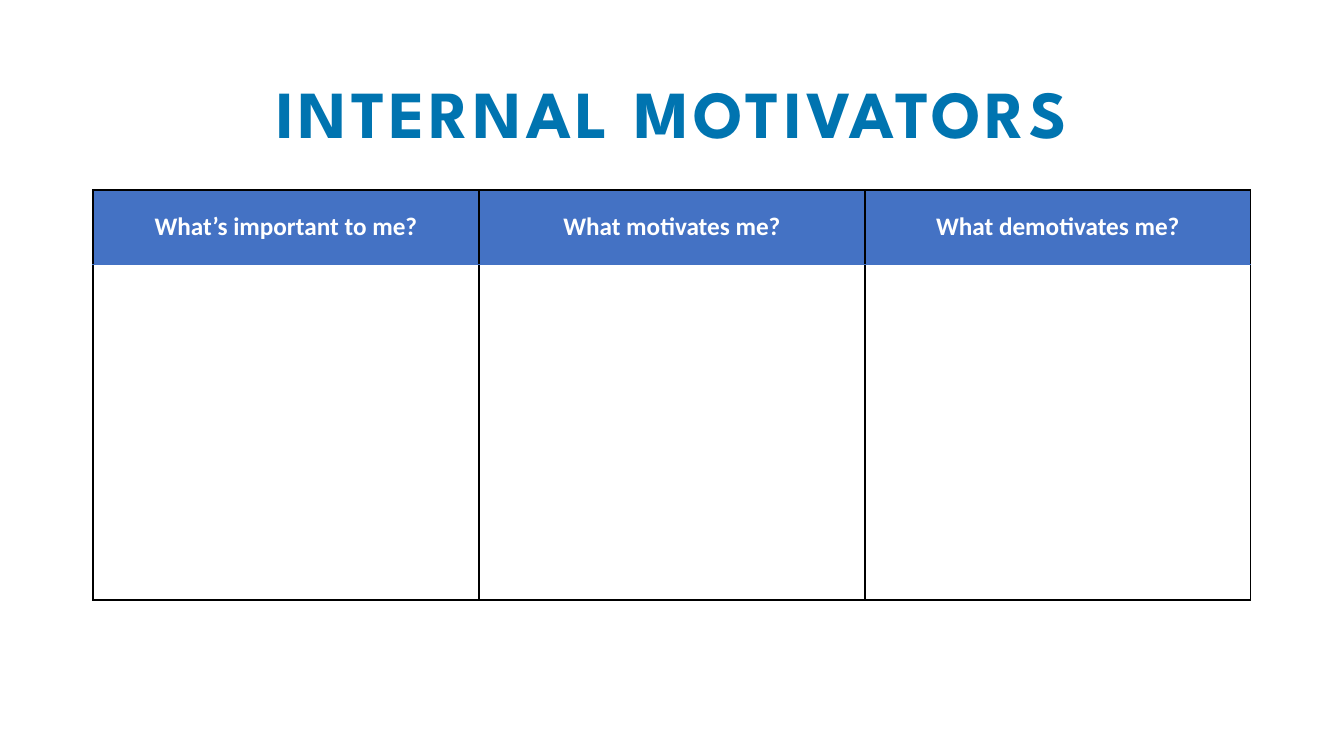
import pptx
import pptx.dml.color
import pptx.enum.text
import pptx.oxml
import pptx.oxml.ns
import pptx.util

RGBColor = pptx.dml.color.RGBColor
TITLE_BLUE = RGBColor(0x00, 0x74, 0xB0)
HEADER_BLUE = RGBColor(0x44, 0x72, 0xC4)
WHITE = RGBColor(0xFF, 0xFF, 0xFF)
BLACK = RGBColor(0x00, 0x00, 0x00)

TITLE_ONLY = 5
QUESTIONS = ["What’s important to me?", "What motivates me?", "What demotivates me?"]


def px(length):
    return round(length * 914400 / 100.8)


class SlideBuilder:
    title_font = "League Spartan"
    table_font = "Calibri"

    def __init__(self, presentation):
        self.slide = presentation.slides.add_slide(presentation.slide_layouts[TITLE_ONLY])

    def bold_text(self, paragraph, text, font_name, size, color):
        """Fill a paragraph with bold, centred text."""
        paragraph.text = text
        paragraph.alignment = pptx.enum.text.PP_ALIGN.CENTER
        font = paragraph.font
        font.name, font.size, font.bold = font_name, pptx.util.Pt(size), True
        font.color.rgb = color

    def title(self, text, left, top, width, height):
        heading = self.slide.shapes.title
        heading.left, heading.top = px(left), px(top)
        heading.width, heading.height = px(width), px(height)
        heading.text_frame.vertical_anchor = pptx.enum.text.MSO_ANCHOR.MIDDLE
        paragraph = heading.text_frame.paragraphs[0]
        self.bold_text(paragraph, text, self.title_font, 48, TITLE_BLUE)
        paragraph.line_spacing = 0.9
        paragraph._p.get_or_add_pPr().get_or_add_defRPr().set("spc", "300")

    def border(self, cell, side, color, points):
        line = pptx.oxml.parse_xml(
            f'<a:ln{side} {pptx.oxml.ns.nsdecls("a")} w="{pptx.util.Pt(points)}">'
            f'<a:solidFill><a:srgbClr val="{color}"/></a:solidFill></a:ln{side}>')
        cell._tc.get_or_add_tcPr().append(line)

    def cell(self, cell, fill, top, bottom):
        """Style a cell; top and bottom are (colour, points) pairs."""
        edge = (BLACK, 1)
        for side, style in zip("LRTB", (edge, edge, top, bottom)):
            self.border(cell, side, *style)
        cell.fill.solid()
        cell.fill.fore_color.rgb = fill
        cell.vertical_anchor = pptx.enum.text.MSO_ANCHOR.MIDDLE

    def question_table(self, questions, left, top, column_width, row_heights):
        table = self.slide.shapes.add_table(
            len(row_heights), len(questions), px(left), px(top),
            px(column_width * len(questions)), px(sum(row_heights))).table
        table.horz_banding = False
        for row, height in zip(table.rows, row_heights):
            row.height = px(height)
        outline, divider = (BLACK, 1), (HEADER_BLUE, 0.5)
        for column, question in enumerate(questions):
            table.columns[column].width = px(column_width)
            header, answer = table.cell(0, column), table.cell(1, column)
            self.cell(header, HEADER_BLUE, outline, divider)
            self.cell(answer, WHITE, divider, outline)
            self.bold_text(header.text_frame.paragraphs[0], question, self.table_font, 18, WHITE)


def main():
    presentation = pptx.Presentation()
    presentation.slide_width, presentation.slide_height = px(1344), px(756)
    builder = SlideBuilder(presentation)
    builder.title("INTERNAL MOTIVATORS", 93, 44, 1159, 146)
    builder.question_table(QUESTIONS, 93, 190, 386, [74, 336])
    presentation.save("out.pptx")


if __name__ == "__main__":
    main()
